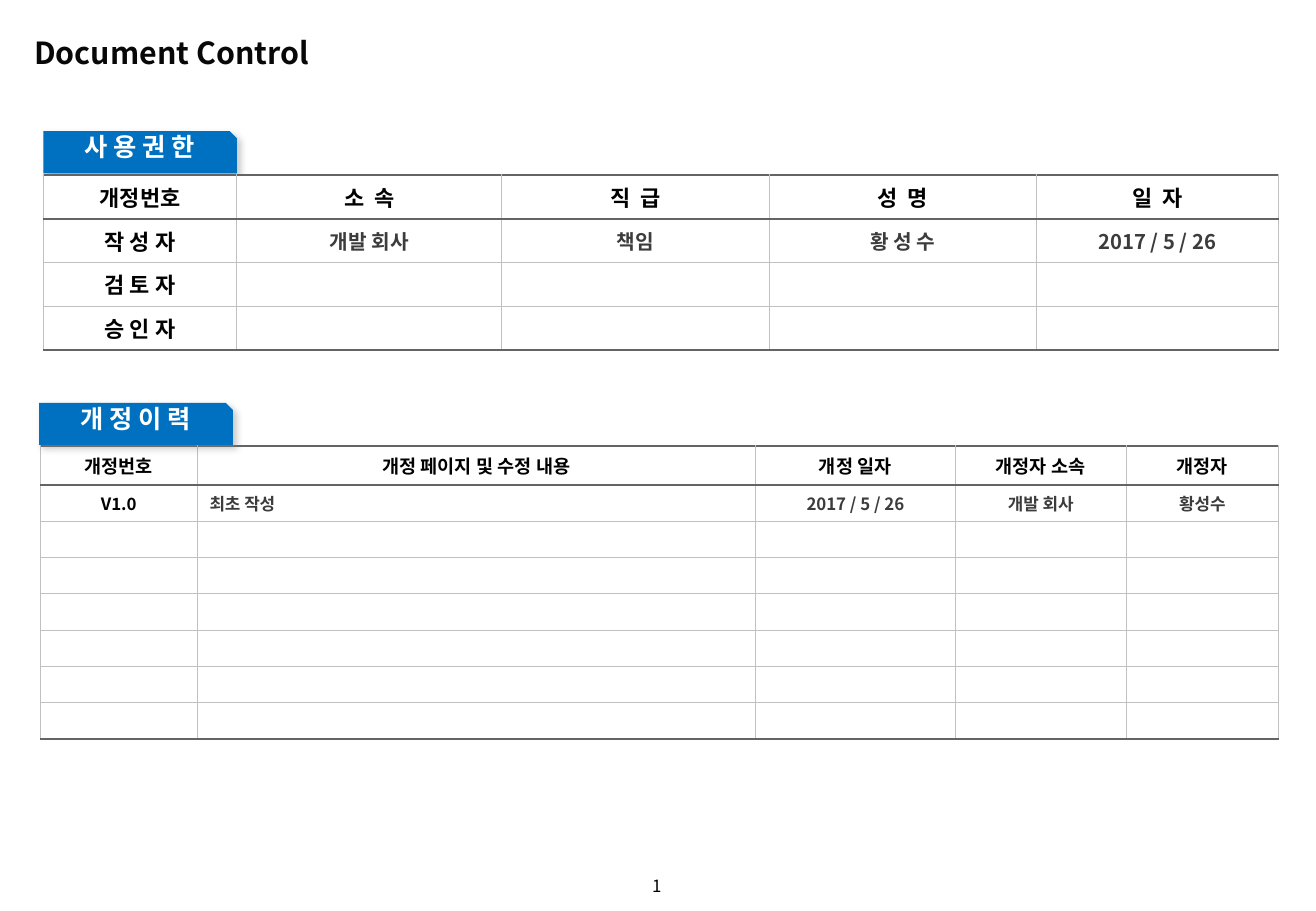
from lxml import etree
from pptx import Presentation
from pptx.dml.color import RGBColor
from pptx.enum.text import MSO_ANCHOR, PP_ALIGN
from pptx.oxml.ns import qn
from pptx.util import Pt

FONT = "Noto Sans CJK KR"
LEFT, CENTER = PP_ALIGN.LEFT, PP_ALIGN.CENTER
TOP, MIDDLE, BOTTOM = MSO_ANCHOR.TOP, MSO_ANCHOR.MIDDLE, MSO_ANCHOR.BOTTOM
BLACK = RGBColor(0x00, 0x00, 0x00)
INK = RGBColor(0x08, 0x08, 0x08)
DARK = RGBColor(0x3C, 0x3C, 0x3C)
RULE = RGBColor(0x64, 0x64, 0x64)
GRID = RGBColor(0xC0, 0xC0, 0xC0)
SHADE = RGBColor(0x80, 0x80, 0x80)
BLUE = RGBColor(0x00, 0x70, 0xC0)
WHITE = RGBColor(0xFF, 0xFF, 0xFF)

ROLES = [
    ["개정번호", "소  속", "직  급", "성  명", "일  자"],
    ["작 성 자", "개발 회사", "책임", "황 성 수", "2017 / 5 / 26"],
    ["검 토 자", "", "", "", ""],
    ["승 인 자", "", "", "", ""],
]
LOG = [
    ["개정번호", "개정 페이지 및 수정 내용", "개정 일자", "개정자 소속", "개정자"],
    ["V1.0", "최초 작성", "2017 / 5 / 26", "개발 회사", "황성수"],
] + [[""] * 5] * 6


def write(frame, text, size, color, bold=True, align=CENTER):
    """Fill a text frame with one formatted paragraph."""
    frame.text = text
    para = frame.paragraphs[0]
    para.alignment = align
    for run in para.runs:
        font = run.font
        font.size, font.bold, font.name = Pt(size), bold, FONT
        font.color.rgb = color
        etree.SubElement(font._element, qn("a:ea"), typeface=FONT)
    if not text:
        etree.SubElement(para._p, qn("a:endParaRPr"), sz=str(size * 100))


def inset(frame, left=0, top=0, right=0, bottom=0):
    """Set the four margins of a text frame."""
    frame.margin_left, frame.margin_top = Pt(left), Pt(top)
    frame.margin_right, frame.margin_bottom = Pt(right), Pt(bottom)


def add_color(parent, color):
    """Append a solid colour element and return it."""
    return etree.SubElement(parent, qn("a:srgbClr"), val=str(color))


def add_edge(cell, side, color, width):
    """Draw one border of a table cell."""
    props = cell._tc.get_or_add_tcPr()
    line = etree.SubElement(props, qn("a:ln" + side), w=str(Pt(width)))
    add_color(etree.SubElement(line, qn("a:solidFill")), color)


def add_edges(cell, row, col, rows, cols):
    """Draw cell borders according to the place in the grid."""
    add_edge(cell, "L", GRID, 0.75 if col == 0 else 0.5)
    add_edge(cell, "R", GRID, 0.75 if col == cols - 1 else 0.5)
    tops = {0: (RULE, 1.5), 1: (RULE, 1)}
    ends = {0: (RULE, 1), rows - 1: (RULE, 1.5)}
    add_edge(cell, "T", *tops.get(row, (GRID, 0.75)))
    add_edge(cell, "B", *ends.get(row, (GRID, 0.75)))


def add_grid(slide, data, left, top, widths, heights, sizes, flush=()):
    """Add a ruled table; sizes are for header, label and body text."""
    rows, cols = len(data), len(widths)
    head, label, body = sizes
    frame = slide.shapes.add_table(
        rows, cols, Pt(left), Pt(top), Pt(sum(widths)), Pt(sum(heights)))
    table = frame.table
    table.first_row = table.horz_banding = False
    for col, width in enumerate(widths):
        table.columns[col].width = Pt(width)
    for row, height in enumerate(heights):
        table.rows[row].height = Pt(height)
        for col, text in enumerate(data[row]):
            cell = table.cell(row, col)
            size = head if row == 0 else label if col == 0 else body
            color = BLACK if row == 0 or col == 0 else DARK
            align = LEFT if row and col in flush else CENTER
            write(cell.text_frame, text, size, color, align=align)
            cell.vertical_anchor = MIDDLE
            add_edges(cell, row, col, rows, cols)
            cell.fill.solid()
            cell.fill.fore_color.rgb = WHITE


def add_tab(slide, text, left, top):
    """Add a blue section tab with a cut corner and a soft shadow."""
    wide, high, cut = 114.75, 25, 4.25
    right, base = left + wide, top + high
    path = slide.shapes.build_freeform(Pt(left), Pt(top))
    path.add_line_segments([
        (Pt(right - cut), Pt(top)), (Pt(right), Pt(top + cut)),
        (Pt(right), Pt(base)), (Pt(left), Pt(base))])
    tab = path.convert_to_shape()
    tab.fill.solid()
    tab.fill.fore_color.rgb = BLUE
    tab.line.fill.background()
    tab.shadow.inherit = False
    effects = tab._element.spPr.find(qn("a:effectLst"))
    shadow = etree.SubElement(
        effects, qn("a:outerShdw"), blurRad=str(Pt(4)), dist=str(Pt(3)),
        dir="2700000", algn="tl", rotWithShape="0")
    etree.SubElement(add_color(shadow, SHADE), qn("a:alpha"), val="40000")
    frame = tab.text_frame
    inset(frame, left=7.2, right=7.2)
    frame.word_wrap = False
    frame.vertical_anchor = TOP
    write(frame, text, 15, WHITE)


def add_title(slide, text):
    """Place and format the slide title."""
    title = slide.shapes.title
    title.left, title.top = Pt(13), Pt(17.25)
    title.width, title.height = Pt(754), Pt(28)
    frame = title.text_frame
    inset(frame, 7.2, 3.6, 7.2, 3.6)
    frame.vertical_anchor = BOTTOM
    write(frame, text, 18, INK, align=LEFT)
    frame.paragraphs[0].line_spacing = 0.85


def add_page(slide, text):
    """Add the page number at the foot."""
    box = slide.shapes.add_textbox(Pt(360.75), Pt(519), Pt(57), Pt(16))
    inset(box.text_frame)
    box.text_frame.word_wrap = True
    write(box.text_frame, text, 10, BLACK, bold=False)


def main():
    """Build the document control slide."""
    deck = Presentation()
    deck.slide_width, deck.slide_height = Pt(780), Pt(540)
    slide = deck.slides.add_slide(deck.slide_layouts[5])
    add_title(slide, "Document Control")
    add_grid(slide, LOG, 23.75, 264.25, [93.25, 330.75, 118.5, 101.25, 90.5],
             [23.1] + [21.5] * 7, (11, 10, 10), flush=(1,))
    add_tab(slide, "사 용 권 한", 25.75, 77.75)
    add_tab(slide, "개 정 이 력", 23.25, 238.75)
    add_grid(slide, ROLES, 25.75, 103.75, [114.5, 157.25, 158.5, 158.5, 143.25],
             [25.8] * 4, (13, 13, 12))
    add_page(slide, "1")
    deck.save("out.pptx")


if __name__ == "__main__":
    main()
